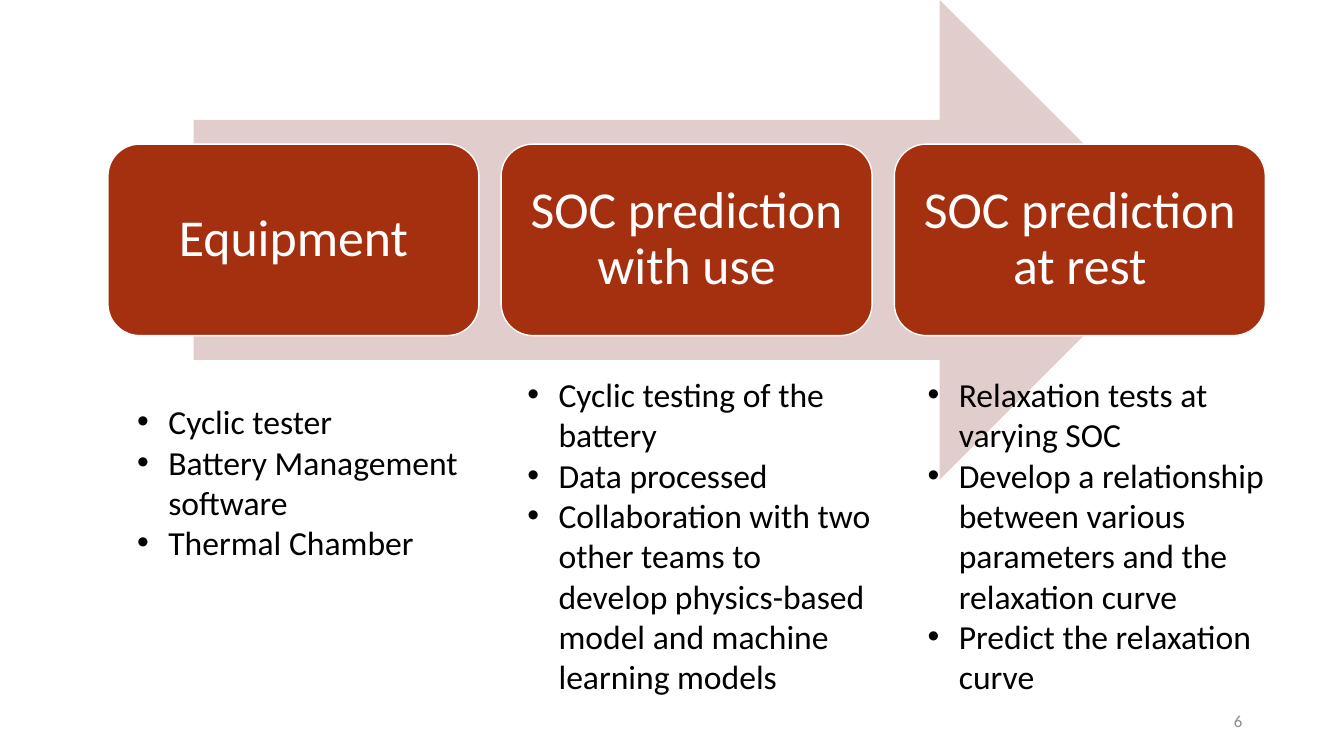
from lxml import etree
from pptx import Presentation
from pptx.dml.color import RGBColor
from pptx.enum.shapes import MSO_SHAPE as Shape
from pptx.enum.text import MSO_ANCHOR as Anchor, MSO_AUTO_SIZE as AutoSize, PP_ALIGN as Align
from pptx.oxml.ns import qn
from pptx.util import Inches, Pt

RUST = RGBColor(0xA5, 0x30, 0x0F)
BLUSH = RGBColor(0xE1, 0xCD, 0xCC)
WHITE = RGBColor(0xFF, 0xFF, 0xFF)
BLACK = RGBColor(0x00, 0x00, 0x00)
GREY = RGBColor(0x8C, 0x8C, 0x8C)
FONT = "Calibri"

CARD_WIDTH, CARD_HEIGHT, CARD_PITCH = 3.68, 1.9, 3.9
LIST_WIDTH, LIST_INDENT = 3.63, 0.31

# Heading, list placeholder index, list offset from its card (x, y), list height, items
STAGES = [
    ("Equipment", 1, (0.19, 2.5), 1.72,
     ["Cyclic tester", "Battery Management software", "Thermal Chamber"]),
    ("SOC prediction with use", 2, (0.16, 2.23), 3.33,
     ["Cyclic testing of the battery", "Data processed",
      "Collaboration with two other teams to develop physics-based model "
      "and machine learning models"]),
    ("SOC prediction at rest", 4, (0.23, 2.23), 3.33,
     ["Relaxation tests at varying SOC",
      "Develop a relationship between various parameters and the relaxation curve",
      "Predict the relaxation curve"]),
]


def add_text(paragraph, text, size, color):
    run = paragraph.add_run()
    run.text = text
    run.font.name = FONT
    run.font.size = Pt(size)
    run.font.bold = False
    run.font.color.rgb = color


def add_block(slide, preset, left, top, width, height, fill):
    block = slide.shapes.add_shape(
        preset, Inches(left), Inches(top), Inches(width), Inches(height))
    block.shadow.inherit = False
    block.fill.solid()
    block.fill.fore_color.rgb = fill
    return block


def add_arrow(slide, left, top, width, height):
    arrow = add_block(slide, Shape.RIGHT_ARROW, left, top, width, height, BLUSH)
    arrow.line.fill.background()


def add_card(slide, left, top, heading):
    card = add_block(slide, Shape.ROUNDED_RECTANGLE, left, top,
                     CARD_WIDTH, CARD_HEIGHT, RUST)
    card.line.color.rgb = WHITE
    card.line.width = Pt(1)
    frame = card.text_frame
    frame.word_wrap = True
    frame.vertical_anchor = Anchor.MIDDLE
    frame.margin_left = frame.margin_right = Inches(0.15)
    frame.margin_top = frame.margin_bottom = Inches(0.15)
    label = frame.paragraphs[0]
    label.alignment = Align.CENTER
    label.line_spacing = 0.9
    add_text(label, heading, 37, WHITE)


def set_bullet(paragraph):
    props = paragraph._p.get_or_add_pPr()
    props.set("marL", str(Inches(LIST_INDENT)))
    props.set("indent", str(-Inches(LIST_INDENT)))
    etree.SubElement(props, qn("a:buFont")).set("typeface", "Arial")
    etree.SubElement(props, qn("a:buChar")).set("char", "•")


def fill_list(slide, index, left, top, height, items):
    body = next(p for p in slide.placeholders if p.placeholder_format.idx == index)
    body.left, body.top = Inches(left), Inches(top)
    body.width, body.height = Inches(LIST_WIDTH), Inches(height)
    # Bring the list in front of the arrow
    slide.shapes._spTree.append(body._element)
    frame = body.text_frame
    frame.word_wrap = True
    frame.auto_size = AutoSize.SHAPE_TO_FIT_TEXT
    frame.vertical_anchor = Anchor.TOP
    for number, item in enumerate(items):
        entry = frame.add_paragraph() if number else frame.paragraphs[0]
        set_bullet(entry)
        entry.space_before = Pt(0)
        add_text(entry, item, 24, BLACK)


def add_stages(slide, left, top):
    for column, (heading, *_) in enumerate(STAGES):
        add_card(slide, left + column * CARD_PITCH, top, heading)
    for column, (_, index, (dx, dy), height, items) in enumerate(STAGES):
        fill_list(slide, index, left + column * CARD_PITCH + dx, top + dy,
                  height, items)


def add_page_number(slide, left, top, width, height):
    box = slide.shapes.add_textbox(
        Inches(left), Inches(top), Inches(width), Inches(height))
    frame = box.text_frame
    frame.word_wrap = True
    frame.vertical_anchor = Anchor.MIDDLE
    number = frame.paragraphs[0]
    number.alignment = Align.RIGHT
    add_text(number, "6", 12, GREY)


def main():
    deck = Presentation()
    deck.slide_width, deck.slide_height = Inches(13.33), Inches(7.5)
    slide = deck.slides.add_slide(deck.slide_layouts[4])

    # Keep only the placeholders that hold lists
    used = {stage[1] for stage in STAGES}
    for holder in list(slide.placeholders):
        if holder.placeholder_format.idx not in used:
            holder._element.getparent().remove(holder._element)

    add_arrow(slide, 1.92, 0, 9.78, 4.76)
    add_stages(slide, 1.07, 1.43)
    add_page_number(slide, 9.42, 6.95, 3, 0.4)
    deck.save("out.pptx")


if __name__ == "__main__":
    main()
